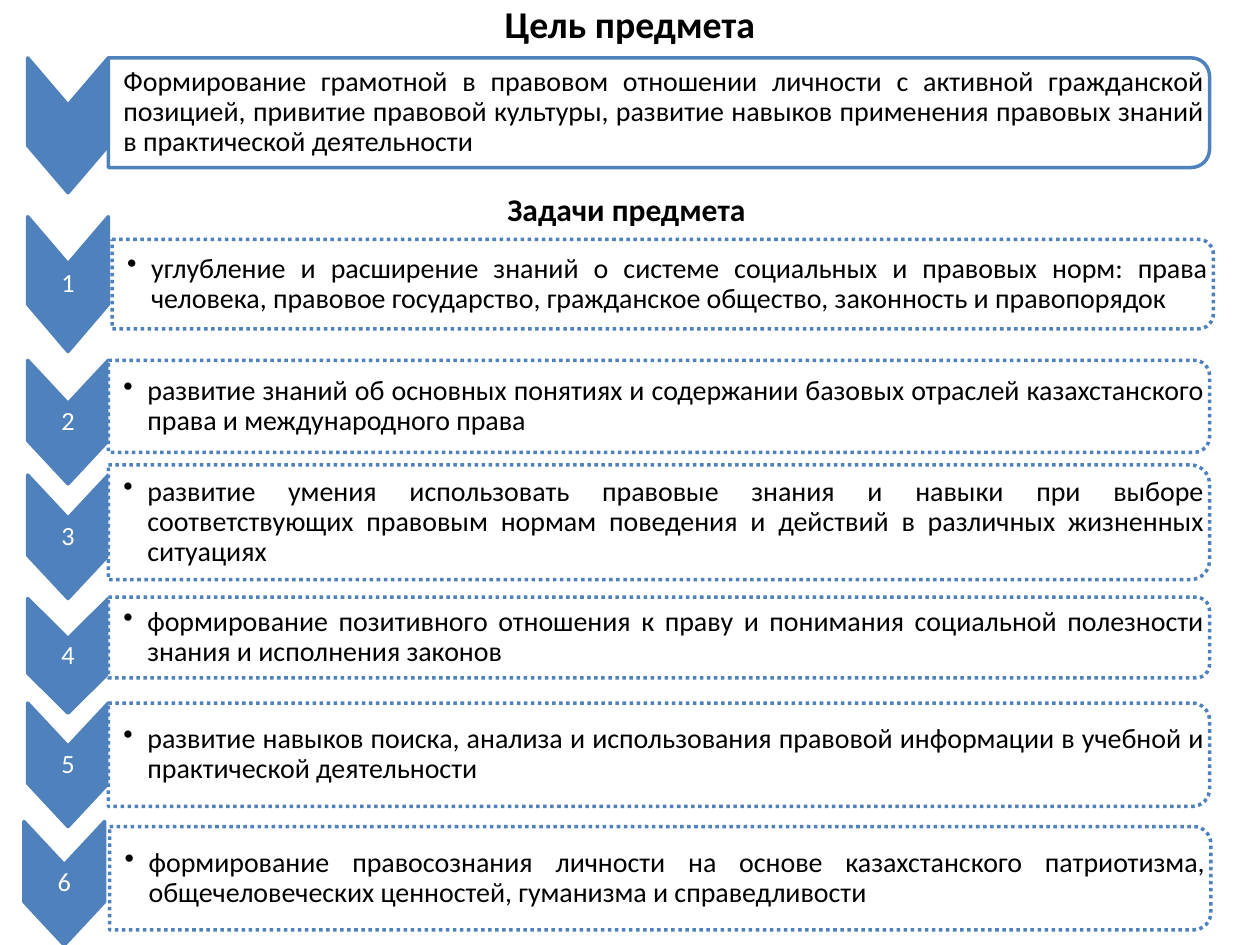
from math import cos, pi, sin

from lxml import etree
from pptx import Presentation
from pptx.dml.color import RGBColor
from pptx.enum.dml import MSO_LINE
from pptx.enum.text import MSO_ANCHOR, PP_ALIGN
from pptx.oxml.ns import qn
from pptx.util import Inches, Pt

MIDDLE = MSO_ANCHOR.MIDDLE
CENTER, JUSTIFY = PP_ALIGN.CENTER, PP_ALIGN.JUSTIFY
DOTTED = MSO_LINE.ROUND_DOT

PAGE_WIDTH, PAGE_HEIGHT = 10, 7.5
ARROW_LEFT, ARROW_WIDTH = 0.22, 0.64
BOX_LEFT, BOX_WIDTH = 0.86, 8.74
CORNER_STEPS = 8
BULLET_INDENT = 0.19
BLUE, WHITE, BLACK = "4F81BD", "FFFFFF", "000000"
FONT = "Calibri"

GOAL = ("Формирование грамотной в правовом отношении личности с активной гражданской "
        "позицией, привитие правовой культуры, развитие навыков применения правовых "
        "знаний в практической деятельности")

# arrow left, arrow top, arrow height, box left, box top, box height, text
TASKS = [
    (ARROW_LEFT, 1.72, 1.07, 0.89, 1.9, 0.71,
     "углубление и расширение знаний о системе социальных и правовых норм: права "
     "человека, правовое государство, гражданское общество, законность и правопорядок "),
    (ARROW_LEFT, 2.86, 0.98, BOX_LEFT, 2.86, 0.73,
     "развитие знаний об основных понятиях и содержании базовых отраслей "
     "казахстанского права и международного права"),
    (ARROW_LEFT, 3.77, 0.98, BOX_LEFT, 3.69, 0.91,
     "развитие умения использовать правовые знания и навыки при выборе "
     "соответствующих правовым нормам поведения и действий в различных жизненных "
     "ситуациях"),
    (ARROW_LEFT, 4.75, 0.91, BOX_LEFT, 4.74, 0.64,
     "формирование позитивного отношения к праву и понимания социальной полезности "
     "знания и исполнения законов"),
    (ARROW_LEFT, 5.58, 0.98, BOX_LEFT, 5.58, 0.82,
     "развитие навыков поиска, анализа и использования правовой информации в учебной "
     "и практической деятельности"),
    (0.19, 6.52, 0.98, 0.87, 6.56, 0.82,
     "формирование правосознания личности на основе казахстанского патриотизма, "
     "общечеловеческих ценностей, гуманизма и справедливости"),
]


def color(hex_code):
    return RGBColor.from_string(hex_code)


def add_outline(page, points, fill):
    """Draw a closed polygon, points in inches, with a blue border."""
    corners = [(Inches(x), Inches(y)) for x, y in points]
    builder = page.shapes.build_freeform(*corners[0], scale=1.0)
    builder.add_line_segments(corners[1:], close=True)
    shape = builder.convert_to_shape()
    shape.shadow.inherit = False
    shape.fill.solid()
    shape.fill.fore_color.rgb = color(fill)
    shape.line.color.rgb = color(BLUE)
    shape.line.width = Pt(2)
    return shape


def write(shape, text, size, align, ink=BLACK, bold=False, insets=(0.1, 0.05, 0.1, 0.05)):
    """Fill the shape with one paragraph; insets are left, top, right, bottom."""
    frame = shape.text_frame
    frame.word_wrap = True
    frame.vertical_anchor = MIDDLE
    (frame.margin_left, frame.margin_top,
     frame.margin_right, frame.margin_bottom) = map(Inches, insets)
    frame.text = text
    para = frame.paragraphs[0]
    para.alignment = align
    font = para.runs[0].font
    font.name, font.size, font.bold = FONT, Pt(size), bold
    font.color.rgb = color(ink)
    return para


def add_bullet(para):
    props = para._p.get_or_add_pPr()
    props.set("marL", str(Inches(BULLET_INDENT)))
    props.set("indent", str(-Inches(BULLET_INDENT)))
    etree.SubElement(props, qn("a:buChar")).set("char", "•")


def add_heading(page, text, top, size):
    box = page.shapes.add_textbox(0, Inches(top), Inches(PAGE_WIDTH), Inches(0.36))
    write(box, text, size, CENTER, bold=True)


def add_arrow(page, left, top, height, label=""):
    """Add a downward chevron whose notch is as deep as its tip."""
    right, middle = left + ARROW_WIDTH, left + ARROW_WIDTH / 2
    depth = height * 0.35
    bottom = top + height
    arrow = add_outline(page, [
        (right, top), (right, bottom - depth), (middle, bottom),
        (left, bottom - depth), (left, top), (middle, top + depth)], BLUE)
    if label:
        para = write(arrow, label, 15, CENTER, WHITE, insets=(0.01, 0.32, 0.01, 0.32))
        para.line_spacing = 0.9


def add_box(page, left, top, height, text):
    """Add a white box with rounded corners on the right side only."""
    right, bottom = left + BOX_WIDTH, top + height
    radius = height / 6
    angles = [pi / 2 * step / CORNER_STEPS for step in range(CORNER_STEPS + 1)]
    curve = [(right - radius * (1 - sin(a)), radius * (1 - cos(a))) for a in angles]
    upper = [(x, top + drop) for x, drop in curve]
    lower = [(x, bottom - drop) for x, drop in reversed(curve)]
    box = add_outline(page, [(left, top), *upper, *lower, (left, bottom)], WHITE)
    tint = box._element.spPr.find(qn("a:solidFill"))[0]
    etree.SubElement(tint, qn("a:alpha")).set("val", "90000")
    para = write(box, text, 16, JUSTIFY, insets=(0.12, 0.04, 0.04, 0.04))
    para.line_spacing = 0.9
    return box, para


def add_task(page, number, task):
    arrow_left, arrow_top, arrow_height, box_left, box_top, box_height, text = task
    add_arrow(page, arrow_left, arrow_top, arrow_height, str(number))
    box, para = add_box(page, box_left, box_top, box_height, text)
    box.line.dash_style = DOTTED
    add_bullet(para)


def main():
    deck = Presentation()
    deck.slide_width, deck.slide_height = Inches(PAGE_WIDTH), Inches(PAGE_HEIGHT)
    page = deck.slides.add_slide(deck.slide_layouts[6])

    add_heading(page, "Цель предмета", 0.01, 21.6)
    add_arrow(page, ARROW_LEFT, 0.46, 1.07)
    add_box(page, BOX_LEFT, 0.46, 0.87, GOAL)

    add_heading(page, "Задачи предмета ", 1.48, 18)
    for number, task in enumerate(TASKS, start=1):
        add_task(page, number, task)

    deck.save("out.pptx")


if __name__ == "__main__":
    main()
